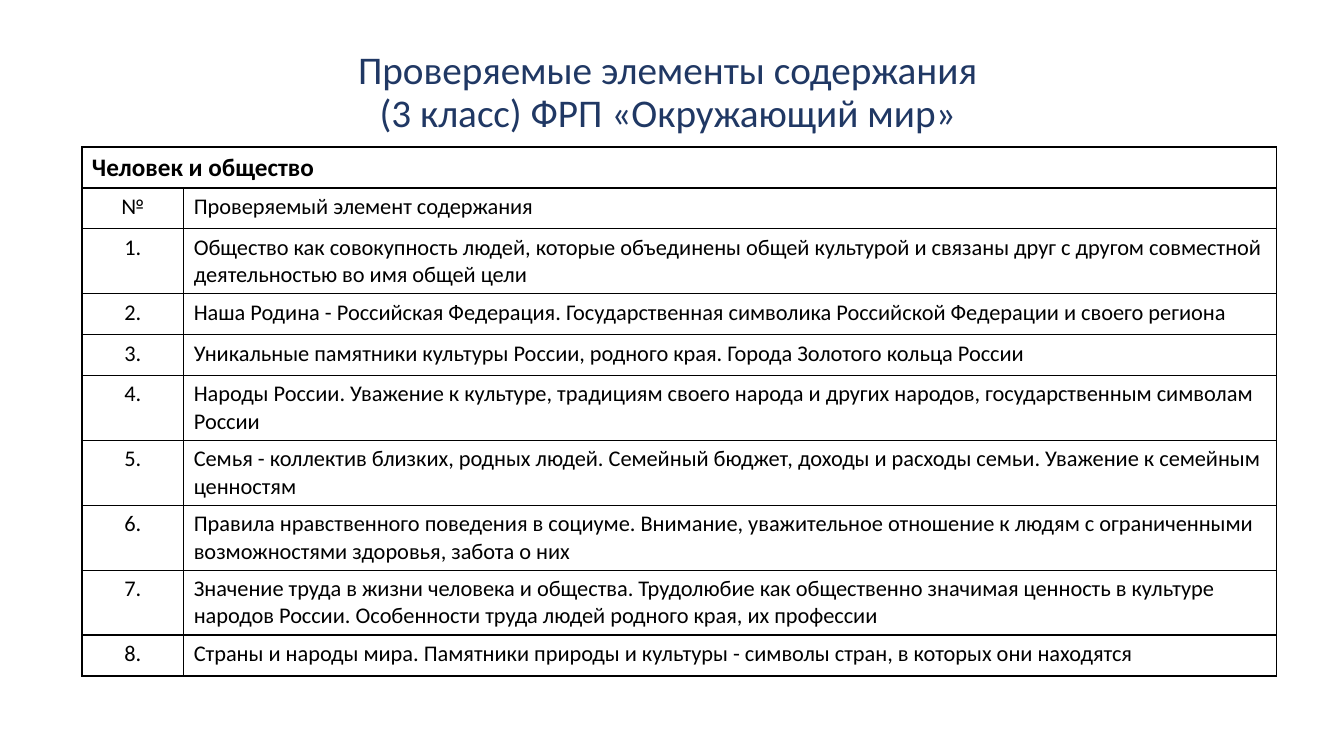
from dataclasses import dataclass

from lxml.etree import SubElement
from pptx import Presentation
from pptx.dml.color import RGBColor
from pptx.enum.text import MSO_ANCHOR as Anchor, MSO_AUTO_SIZE as AutoSize, PP_ALIGN as Align
from pptx.oxml.ns import qn
from pptx.util import Emu, Pt

PX = 9525
FONT = "Calibri"
COLORS = {"title": "203864", "text": "000000", "border": "000000", "cell": "FFFFFF"}
BORDER_SIDES = ("a:lnL", "a:lnR", "a:lnT", "a:lnB")
COLUMN_WIDTHS = (97, 1041)
ROW_HEIGHT = 39


@dataclass(frozen=True)
class TextStyle:
    size: int
    color: str = "text"
    bold: bool = False
    align: Align = Align.LEFT


TITLE = TextStyle(28, "title", align=Align.CENTER)
SECTION = TextStyle(18, bold=True)
NUMBER = TextStyle(16, align=Align.CENTER)
ELEMENT = TextStyle(16)

CONTENT_ELEMENTS = (
    "Общество как совокупность людей, которые объединены общей культурой и связаны друг с другом "
    "совместной деятельностью во имя общей цели",
    "Наша Родина - Российская Федерация. Государственная символика Российской Федерации и своего региона",
    "Уникальные памятники культуры России, родного края. Города Золотого кольца России",
    "Народы России. Уважение к культуре, традициям своего народа и других народов, "
    "государственным символам России",
    "Семья - коллектив близких, родных людей. Семейный бюджет, доходы и расходы семьи. "
    "Уважение к семейным ценностям",
    "Правила нравственного поведения в социуме. Внимание, уважительное отношение к людям "
    "с ограниченными возможностями здоровья, забота о них",
    "Значение труда в жизни человека и общества. Трудолюбие как общественно значимая ценность "
    "в культуре народов России. Особенности труда людей родного края, их профессии",
    "Страны и народы мира. Памятники природы и культуры - символы стран, в которых они находятся",
)


def px(length: int) -> Emu:
    return Emu(length * PX)


def rgb(name: str) -> RGBColor:
    return RGBColor.from_string(COLORS[name])


def write(frame, text: str, style: TextStyle) -> None:
    frame.text = text
    paragraph = frame.paragraphs[0]
    paragraph.alignment = style.align
    paragraph.font.name = FONT
    paragraph.font.size = Pt(style.size)
    paragraph.font.bold = style.bold
    paragraph.font.color.rgb = rgb(style.color)


def outline(cell) -> None:
    properties = cell._tc.get_or_add_tcPr()
    for side in BORDER_SIDES:
        line = SubElement(properties, qn(side), w=str(Pt(1)))
        fill = SubElement(line, qn("a:solidFill"))
        SubElement(fill, qn("a:srgbClr"), val=COLORS["border"])


def add_heading(slide) -> None:
    heading = slide.shapes.title
    heading.left, heading.top, heading.width, heading.height = map(px, (88, 38, 1104, 102))
    frame = heading.text_frame
    frame.auto_size = AutoSize.NONE
    frame.vertical_anchor = Anchor.MIDDLE
    write(frame, "Проверяемые элементы содержания \v(3 класс) ФРП «Окружающий мир» ", TITLE)
    frame.paragraphs[0].line_spacing = 0.9


def add_content_table(slide) -> None:
    rows = [("№", "Проверяемый элемент содержания")]
    rows += [(f"{number}.", element) for number, element in enumerate(CONTENT_ELEMENTS, 1)]
    row_count = len(rows) + 1
    table = slide.shapes.add_table(
        row_count, len(COLUMN_WIDTHS), px(78), px(140),
        px(sum(COLUMN_WIDTHS)), px(ROW_HEIGHT * row_count),
    ).table
    for column, width in zip(table.columns, COLUMN_WIDTHS):
        column.width = px(width)
    for cell in table.iter_cells():
        outline(cell)
        cell.fill.solid()
        cell.fill.fore_color.rgb = rgb("cell")

    section = table.cell(0, 0)
    section.merge(table.cell(0, 1))
    write(section.text_frame, "Человек и общество", SECTION)
    for row, texts in enumerate(rows, 1):
        for column, (text, style) in enumerate(zip(texts, (NUMBER, ELEMENT))):
            write(table.cell(row, column).text_frame, text, style)


def main() -> None:
    deck = Presentation()
    deck.slide_width, deck.slide_height = px(1280), px(720)
    slide = deck.slides.add_slide(deck.slide_layouts.get_by_name("Title Only"))
    add_heading(slide)
    add_content_table(slide)
    deck.save("out.pptx")


if __name__ == "__main__":
    main()
